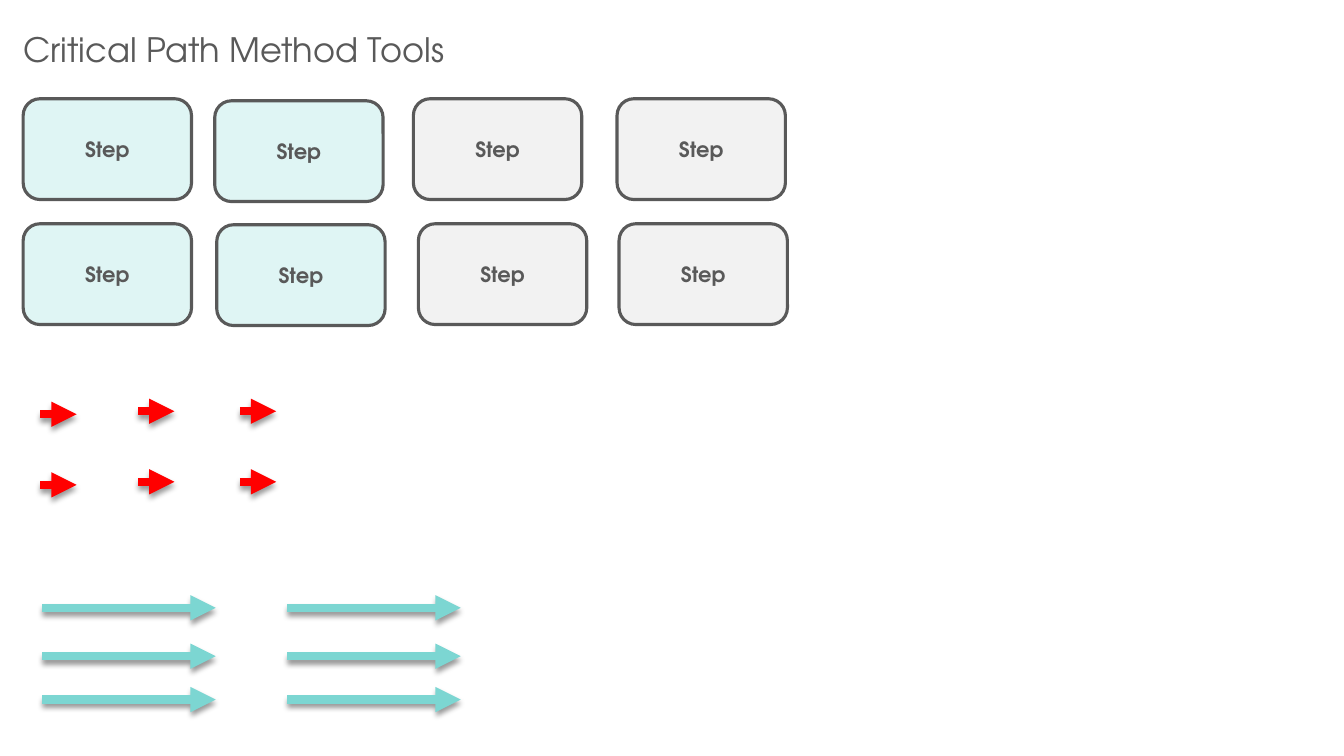
from lxml import etree
from pptx import Presentation
from pptx import util as u
from pptx.dml.color import RGBColor
from pptx.enum import shapes, text
from pptx.oxml import ns

FONT = "TeX Gyre Adventor"
GREY, MINT, PALE, TEAL, RED = "595959", "DFF5F4", "F2F2F2", "7CD6D2", "FF0000"
STEP_W, STEP_H = 1.67, 1


def color(value):
    return RGBColor.from_string(value)


def inches(*lengths):
    return [u.Inches(n) for n in lengths]


def add_run(p, words, size, bold=False):
    r = p.add_run()
    r.text = words
    r.font.name = FONT
    r.font.size = u.Pt(size)
    r.font.bold = bold
    r.font.color.rgb = color(GREY)


def add_title(s, box, words):
    tf = s.shapes.add_textbox(*inches(*box)).text_frame
    tf.word_wrap = True
    tf.auto_size = text.MSO_AUTO_SIZE.SHAPE_TO_FIT_TEXT
    add_run(tf.paragraphs[0], words, 24)


def add_step(s, left, top, fill):
    sp = s.shapes.add_shape(shapes.MSO_SHAPE.FLOWCHART_ALTERNATE_PROCESS,
                            *inches(left, top, STEP_W, STEP_H))
    sp.shadow.inherit = False
    sp.fill.solid()
    sp.fill.fore_color.rgb = color(fill)
    sp.line.color.rgb = color(GREY)
    sp.line.width = u.Pt(2.25)
    tf = sp.text_frame
    tf.vertical_anchor = text.MSO_ANCHOR.MIDDLE
    p = tf.paragraphs[0]
    p.alignment = text.PP_ALIGN.CENTER
    add_run(p, "Step", 15, bold=True)


def add_steps(s, left, top, rows):
    """Each row lists (x, y, fill) of its steps, measured from left and top."""
    for row in rows:
        for x, y, fill in row:
            add_step(s, left + x, top + y, fill)


def add_shadow(line):
    effects = etree.SubElement(line._element.spPr, ns.qn("a:effectLst"))
    shadow = etree.SubElement(effects, ns.qn("a:outerShdw"),
                              blurRad=str(u.Pt(4)), dist=str(u.Pt(3)),
                              dir="5400000", rotWithShape="0")
    black = etree.SubElement(shadow, ns.qn("a:srgbClr"), val="000000")
    etree.SubElement(black, ns.qn("a:alpha"), val="40000")


def add_arrow(s, left, top, length, stroke):
    line = s.shapes.add_connector(shapes.MSO_CONNECTOR.STRAIGHT,
                                  *inches(left, top, left + length, top))
    line.line.color.rgb = color(stroke)
    line.line.width = u.Pt(6)
    etree.SubElement(line.line._get_or_add_ln(), ns.qn("a:tailEnd"), type="triangle")
    add_shadow(line)


def add_arrows(s, left, top, starts, rows, length, stroke):
    """Repeat the (x, y) starts of one row of arrows at each row offset."""
    for row in rows:
        for x, y in starts:
            add_arrow(s, left + x, top + row + y, length, stroke)


def build_tools(prs):
    s = prs.slides.add_slide(prs.slide_layouts[6])
    add_title(s, (0.13, 0.24, 8.08, 0.5), "Critical Path Method Tools")
    add_steps(s, 0.23, 0.98, [
        [(0, 0, MINT), (1.9, 0.02, MINT), (3.87, 0, PALE), (5.89, 0, PALE)],
        [(0, 1.24, MINT), (1.92, 1.25, MINT), (3.92, 1.24, PALE), (5.91, 1.24, PALE)],
    ])
    add_arrows(s, 0.4, 4.08, [(0, 0.03), (0.97, 0), (1.98, 0)], (0, 0.7), 0.36, RED)
    add_arrows(s, 0.42, 6.03, [(0, 0), (2.43, 0)], (0, 0.48, 0.91), 1.72, TEAL)


def main():
    prs = Presentation()
    prs.slide_width, prs.slide_height = inches(13.33, 7.5)
    build_tools(prs)
    prs.save("out.pptx")


if __name__ == "__main__":
    main()
